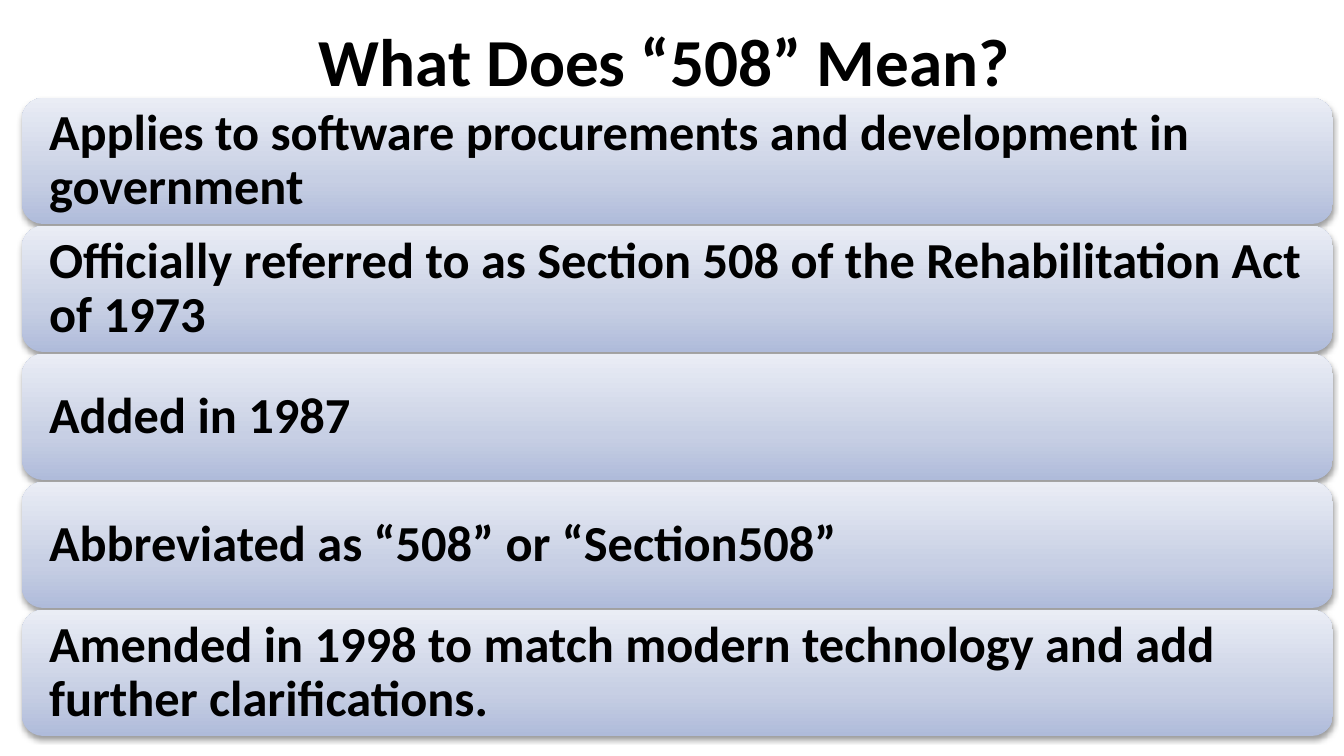
from dataclasses import dataclass

from pptx import Presentation
from pptx.dml.color import RGBColor
from pptx.enum.shapes import MSO_SHAPE
from pptx.enum.text import MSO_ANCHOR, PP_ALIGN
from pptx.oxml import parse_xml
from pptx.oxml.ns import nsdecls, qn
from pptx.util import Emu, Pt

ROUNDED = MSO_SHAPE.ROUNDED_RECTANGLE
MIDDLE = MSO_ANCHOR.MIDDLE
LEFT, CENTER = PP_ALIGN.LEFT, PP_ALIGN.CENTER
EMU_PER_PX = 914400 / 134.4
SLIDE_WIDTH, SLIDE_HEIGHT = 1344, 756
BAR_LEFT, BAR_TOP, BAR_WIDTH, BAR_HEIGHT = 22, 98, 1311, 126
BAR_PITCH = 128
BAR_INSET = 21

TITLE = "What Does “508” Mean? "
FACTS = (
    "Applies to software procurements and development in government",
    "Officially referred to as Section 508 of the Rehabilitation Act of 1973",
    "Added in 1987",
    "Abbreviated as “508” or “Section508”",
    "Amended in 1998 to match modern technology and add further clarifications.",
)


@dataclass(frozen=True)
class Theme:
    font: str = "Calibri"
    text: str = "000000"
    shadow: str = "000000"
    gradient: tuple = ((0, "AFBBDA"), (35, "C7CFE4"), (100, "EAEDF5"))
    title_size: int = 36
    fact_size: int = 27


def px(length):
    return Emu(round(length * EMU_PER_PX))


class SlideBuilder:
    """Draws styled elements on one slide."""

    def __init__(self, slide, theme):
        self.slide = slide
        self.theme = theme

    def set_text(self, shape, text, size, alignment, inset):
        frame = shape.text_frame
        frame.word_wrap = True
        frame.vertical_anchor = MIDDLE
        frame.margin_left = frame.margin_right = px(inset)
        frame.margin_top = frame.margin_bottom = px(inset)
        frame.text = text
        paragraph = frame.paragraphs[0]
        paragraph.alignment = alignment
        font = paragraph.runs[0].font
        font.name = self.theme.font
        font.size = Pt(size)
        font.bold = True
        font.color.rgb = RGBColor.from_string(self.theme.text)
        return paragraph

    def title(self, text, left, top, width, height):
        box = self.slide.shapes.add_textbox(px(left), px(top), px(width), px(height))
        self.set_text(box, text, self.theme.title_size, CENTER, 6)

    def bar(self, text, left, top, width, height):
        shape = self.slide.shapes.add_shape(ROUNDED, px(left), px(top), px(width), px(height))
        shape.shadow.inherit = False
        shape.line.fill.background()
        self.add_gradient(shape)
        self.add_shadow(shape)
        paragraph = self.set_text(shape, text, self.theme.fact_size, LEFT, BAR_INSET)
        paragraph.line_spacing = 0.9

    def add_gradient(self, shape):
        stops = "".join(
            f'<a:gs pos="{position * 1000}"><a:srgbClr val="{color}"/></a:gs>'
            for position, color in self.theme.gradient
        )
        gradient = parse_xml(
            f'<a:gradFill {nsdecls("a")} rotWithShape="1"><a:gsLst>{stops}</a:gsLst>'
            '<a:lin ang="16200000" scaled="0"/></a:gradFill>'
        )
        shape.element.spPr.find(qn("a:ln")).addprevious(gradient)

    def add_shadow(self, shape):
        shadow = parse_xml(
            f'<a:outerShdw {nsdecls("a")} blurRad="{Pt(3.1)}" dist="{Pt(1.6)}" '
            f'dir="5400000" rotWithShape="0"><a:srgbClr val="{self.theme.shadow}">'
            '<a:alpha val="38000"/></a:srgbClr></a:outerShdw>'
        )
        shape.element.spPr.find(qn("a:effectLst")).append(shadow)


def main():
    presentation = Presentation()
    presentation.slide_width = px(SLIDE_WIDTH)
    presentation.slide_height = px(SLIDE_HEIGHT)
    slide = presentation.slides.add_slide(presentation.slide_layouts[6])
    builder = SlideBuilder(slide, Theme())
    builder.title(TITLE, 67, -3, 1210, 126)
    for index, fact in enumerate(FACTS):
        builder.bar(fact, BAR_LEFT, BAR_TOP + index * BAR_PITCH, BAR_WIDTH, BAR_HEIGHT)
    presentation.save("out.pptx")


if __name__ == "__main__":
    main()
